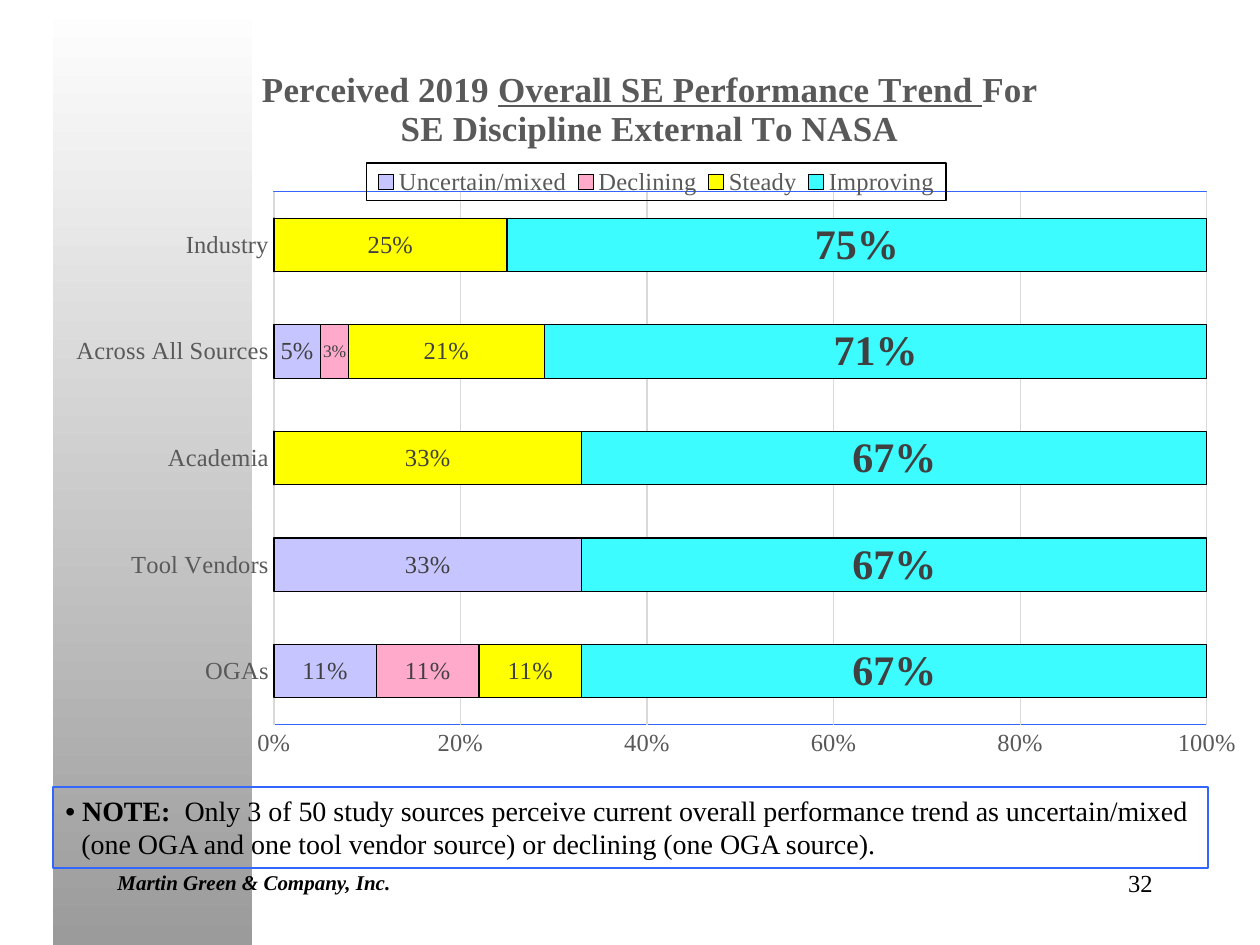
from lxml.etree import SubElement
from pptx import Presentation
from pptx.chart.data import CategoryChartData
from pptx.dml.color import RGBColor
from pptx.enum.chart import XL_CHART_TYPE as CT, XL_LABEL_POSITION as LP
from pptx.enum.chart import XL_LEGEND_POSITION as LG, XL_TICK_MARK as TM
from pptx.enum.shapes import MSO_SHAPE as SHAPE
from pptx.enum.text import MSO_ANCHOR as ANCHOR, PP_ALIGN as ALIGN
from pptx.oxml import parse_xml
from pptx.oxml.ns import nsdecls, qn
from pptx.util import Emu, Pt

FONT = "Times New Roman"
C = {"black": "000000", "white": "FFFFFF", "shade": "9B9B9B", "text": "595959",
     "label": "404040", "grid": "D9D9D9", "blue": "3366FF"}
CATS = ["OGAs", "Tool Vendors", "Academia", "Across All Sources", "Industry"]
SERIES = [
    ("Uncertain/mixed", [0.11, 0.33, 0, 0.05, 0], "C6C5FF"),
    ("Declining", [0.11, 0, 0, 0.03, 0], "FFA9CB"),
    ("Steady", [0.11, 0, 0.33, 0.21, 0.25], "FFFF00"),
    ("Improving", [0.67, 0.67, 0.67, 0.71, 0.75], "3CFCFF"),
]
NARROW = 0.04
LABEL_FORMAT = "0%;;"
TITLE = [[("Perceived 2019 ", False), ("Overall SE Performance Trend ", True), ("For", False)],
         [("SE Discipline External To NASA", False)]]


def px(n):
    """Turn pixels at 126 to the inch into EMU."""
    return Emu(round(n * 914400 / 126))


def rgb(name):
    """Look up a palette name."""
    return RGBColor.from_string(C[name])


def style(font, size, color="text", bold=False, italic=False, underline=False):
    """Set every property of a font."""
    font.name, font.size, font.color.rgb = FONT, Pt(size), rgb(color)
    font.bold, font.italic, font.underline = bold, italic, underline


def add_text(p, text, **fmt):
    """Append a formatted run to a paragraph."""
    r = p.add_run()
    r.text = text
    style(r.font, **fmt)


def outline(line, color):
    """Draw a thin line in a palette colour."""
    line.color.rgb = rgb(color)
    line.width = Pt(0.75)


def layout(el, x, y, w=None, h=None, inner=False):
    """Place a chart part by fractions of the chart area."""
    for old in el.findall(qn("c:layout")):
        el.remove(old)
    lay = parse_xml(f"<c:layout {nsdecls('c')}><c:manualLayout/></c:layout>")
    items = [("layoutTarget", "inner")] if inner else []
    items += [("xMode", "edge"), ("yMode", "edge"), ("x", x), ("y", y), ("w", w), ("h", h)]
    for tag, val in items:
        if val is not None:
            SubElement(lay[0], qn(f"c:{tag}")).set("val", str(val))
    before = [qn("c:tx"), qn("c:legendPos")]
    el.insert(sum(child.tag in before for child in el), lay)


def sp_pr(line=None):
    """Make chart part properties with no fill and an optional line."""
    ln = f'<a:solidFill><a:srgbClr val="{C[line]}"/></a:solidFill>' if line else "<a:noFill/>"
    return parse_xml(f"<c:spPr {nsdecls('c', 'a')}><a:noFill/>"
                     f'<a:ln w="9525">{ln}</a:ln></c:spPr>')


def add_side_band(s, x, y, w, h):
    """Draw the shaded band down the left."""
    sp = s.shapes.add_shape(SHAPE.RECTANGLE, px(x), px(y), px(w), px(h))
    sp.shadow.inherit = False
    sp.line.fill.background()
    sp.fill.gradient()
    sp.fill.gradient_angle = 270
    for stop, name in zip(sp.fill.gradient_stops, ("white", "shade")):
        stop.color.rgb = rgb(name)


def add_footer(s, x, y, w, h, text, align, **fmt):
    """Add one footer text, centred vertically in its box."""
    tf = s.shapes.add_textbox(px(x), px(y), px(w), px(h)).text_frame
    tf.word_wrap, tf.vertical_anchor = True, ANCHOR.MIDDLE
    tf.paragraphs[0].alignment = align
    add_text(tf.paragraphs[0], text, color="black", **fmt)


def add_title(chart):
    """Write the two-line chart title."""
    tf = chart.chart_title.text_frame
    for i, line in enumerate(TITLE):
        p = tf.add_paragraph() if i else tf.paragraphs[0]
        p.alignment = ALIGN.CENTER
        for text, underline in line:
            add_text(p, text, size=20, bold=True, underline=underline)
    chart.chart_title.include_in_layout = False
    layout(chart.chart_title._element, 0.17, 0.03)


def add_legend(chart):
    """Put the framed legend over the top of the plot."""
    chart.has_legend = True
    legend = chart.legend
    legend.position, legend.include_in_layout = LG.TOP, False
    style(legend.font, 14)
    el = legend._element
    layout(el, 0.26, 0.16, 0.48, 0.05)
    el.find(qn("c:txPr")).addprevious(sp_pr("black"))


def format_axes(chart):
    """Format the category and value axes."""
    for axis in (chart.category_axis, chart.value_axis):
        axis.major_tick_mark = axis.minor_tick_mark = TM.NONE
        style(axis.tick_labels.font, 14)
    outline(chart.category_axis.format.line, "grid")
    val = chart.value_axis
    val.minimum_scale, val.maximum_scale, val.major_unit = 0, 1, 0.2
    val.format.line.fill.background()
    outline(val.major_gridlines.format.line, "grid")
    val.tick_labels.number_format = "0%"
    val.tick_labels.number_format_is_linked = False


def label_series(ser, vals, size, bold):
    """Label a series, with smaller type where a segment is narrow."""
    labels = ser.data_labels
    labels.show_value, labels.position = True, LP.CENTER
    labels.number_format, labels.number_format_is_linked = LABEL_FORMAT, False
    style(labels.font, size, "label", bold=bold)
    for i, val in enumerate(vals):
        if 0 < val < NARROW:
            label = ser.points[i].data_label
            style(label.font, 10, "label")
            label.position = LP.CENTER
            idx = labels._element.find(qn("c:dLbl")).find(qn("c:idx"))
            idx.addnext(parse_xml(f'<c:numFmt {nsdecls("c")} formatCode="{LABEL_FORMAT}"'
                                  ' sourceLinked="0"/>'))


def add_trend_chart(s, x, y, w, h):
    """Add the stacked bar chart of trends by source."""
    data = CategoryChartData(number_format="0%")
    data.categories = CATS
    for name, vals, _ in SERIES:
        data.add_series(name, vals)
    chart = s.shapes.add_chart(CT.BAR_STACKED, px(x), px(y), px(w), px(h), data).chart
    style(chart.font, 14, "black")
    add_title(chart)
    add_legend(chart)
    format_axes(chart)
    plot = chart.plots[0]
    plot.gap_width, plot.overlap, plot.vary_by_categories = 100, 100, False
    for ser, (name, vals, color) in zip(plot.series, SERIES):
        ser.format.fill.solid()
        ser.format.fill.fore_color.rgb = RGBColor.from_string(color)
        outline(ser.format.line, "black")
        main_series = name == "Improving"
        label_series(ser, vals, 24 if main_series else 14, main_series)
    space = chart._chartSpace
    area = space.find(qn("c:chart")).find(qn("c:plotArea"))
    layout(area, 0.183, 0.198, 0.773, 0.705, inner=True)
    area.append(sp_pr("blue"))
    space.find(qn("c:txPr")).addprevious(sp_pr())


def add_note(s, x, y, w, h):
    """Add the outlined note with a hanging first line."""
    sp = s.shapes.add_shape(SHAPE.RECTANGLE, px(x), px(y), px(w), px(h))
    sp.shadow.inherit = False
    sp.fill.background()
    outline(sp.line, "blue")
    tf = sp.text_frame
    tf.word_wrap, tf.vertical_anchor = True, ANCHOR.TOP
    p = tf.paragraphs[0]
    p.alignment = ALIGN.LEFT
    p._p.get_or_add_pPr().set("marL", str(px(16)))
    p._p.get_or_add_pPr().set("indent", str(-px(16)))
    add_text(p, "• NOTE:  ", size=16, color="black", bold=True)
    add_text(p, "Only 3 of 50 study sources perceive current overall performance trend as "
             "uncertain/mixed (one OGA and one tool vendor source) or declining "
             "(one OGA source).", size=16, color="black")


def main():
    """Build and save the slide."""
    prs = Presentation()
    prs.slide_width, prs.slide_height = px(1260), px(945)
    s = prs.slides.add_slide(prs.slide_layouts[6])
    add_side_band(s, 53, 0, 199, 945)
    add_footer(s, 105, 851, 725, 63, "Martin Green & Company, Inc.", ALIGN.LEFT,
               size=12, bold=True, italic=True)
    add_footer(s, 903, 851, 262, 63, "32", ALIGN.RIGHT, size=14)
    add_trend_chart(s, 53, 42, 1207, 756)
    add_note(s, 53, 787, 1155, 81)
    prs.save("out.pptx")


if __name__ == "__main__":
    main()
